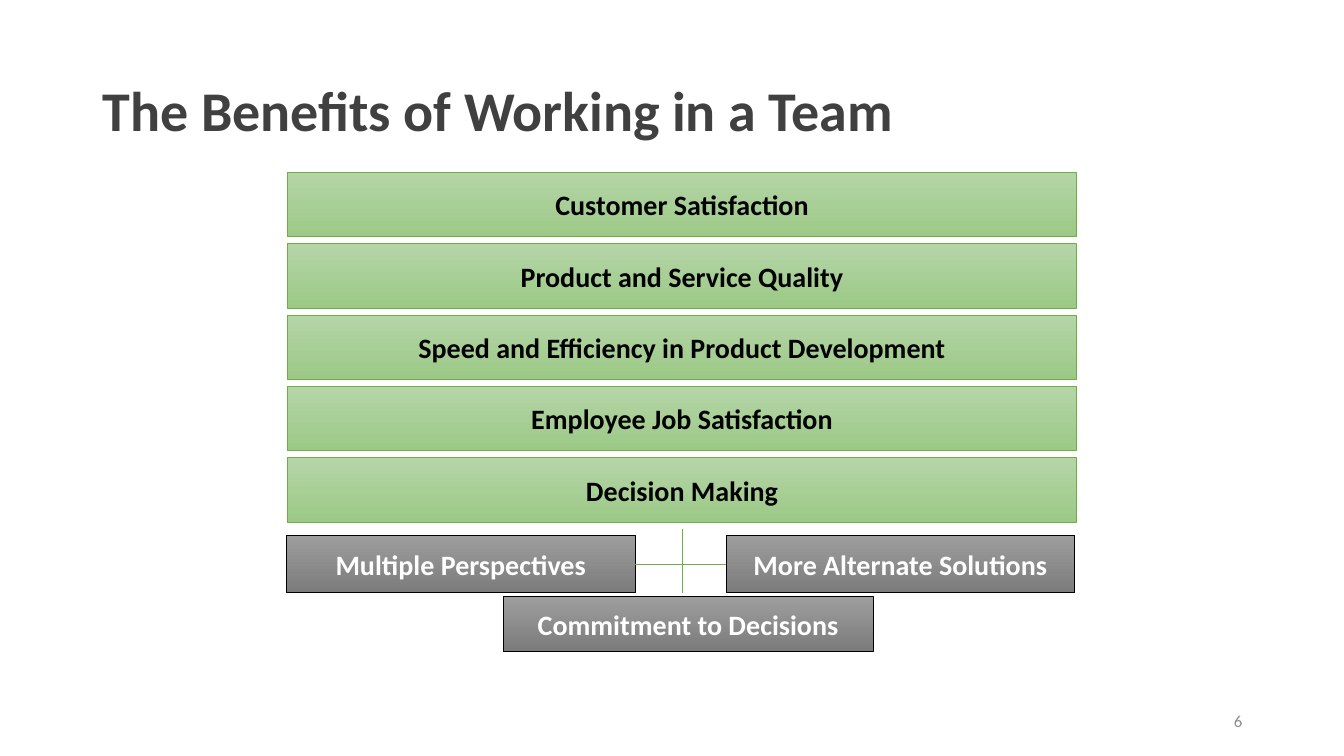
from lxml.etree import SubElement
from pptx import Presentation
from pptx.dml.color import RGBColor
from pptx.enum.shapes import MSO_CONNECTOR, MSO_SHAPE
from pptx.enum.text import MSO_ANCHOR, PP_ALIGN
from pptx.oxml.ns import qn
from pptx.util import Inches, Pt

COLORS = {
    "title": "404041", "number": "8C8C8C", "black": "000000", "white": "FFFFFF",
    "green": "70AD47", "green_top": "B5D5A7", "green_end": "9CC987",
    "grey_top": "9D9D9D", "grey_end": "7C7C7C",
}
BENEFITS = [
    "Customer Satisfaction",
    "Product and Service Quality",
    "Speed and Efficiency in Product Development",
    "Employee Job Satisfaction",
    "Decision Making",
]


def color(name):
    """Return the named colour."""
    return RGBColor.from_string(COLORS[name])


def write(s, text, size=20, ink="black", bold=True, align=PP_ALIGN.CENTER, wrap=False, spacing=None):
    """Write one formatted paragraph, centred vertically, in a shape."""
    tf = s.text_frame
    tf.word_wrap = wrap
    tf.vertical_anchor = MSO_ANCHOR.MIDDLE
    p = tf.paragraphs[0]
    p.alignment = align
    p.line_spacing = spacing
    r = p.add_run()
    r.text = text
    r.font.name = "Calibri"
    r.font.size = Pt(size)
    r.font.bold = bold
    r.font.color.rgb = color(ink)


def add_label(slide, x, y, w, h, text, **fmt):
    """Add a text box with one paragraph."""
    s = slide.shapes.add_textbox(Inches(x), Inches(y), Inches(w), Inches(h))
    write(s, text, wrap=True, **fmt)


def add_bar(slide, x, y, w, h, text, top, end, edge, ink):
    """Add a captioned rectangle with a vertical gradient."""
    s = slide.shapes.add_shape(MSO_SHAPE.RECTANGLE, Inches(x), Inches(y), Inches(w), Inches(h))
    s.shadow.inherit = False
    s.fill.gradient()
    s.fill.gradient_angle = 270
    for stop, name in zip(s.fill.gradient_stops, (top, end)):
        stop.color.rgb = color(name)
    s.line.color.rgb = color(edge)
    s.line.width = Pt(0.5)
    write(s, text, ink=ink)
    return s


def add_line(slide, x1, y1, x2, y2):
    """Add a thin green line."""
    c = slide.shapes.add_connector(MSO_CONNECTOR.STRAIGHT, Inches(x1), Inches(y1), Inches(x2), Inches(y2))
    c.line.color.rgb = color("green")
    c.line.width = Pt(0.5)
    SubElement(c._element.spPr, qn("a:effectLst"))
    return c


def add_benefits(slide, x, y, w, h, gap=0.07):
    """Stack the benefit bars evenly in the box."""
    bar_h = (h + gap) / len(BENEFITS) - gap
    for i, text in enumerate(BENEFITS):
        add_bar(slide, x, y + i * (bar_h + gap), w, bar_h, text, "green_top", "green_end", "green", "black")


def add_decision_factors(slide, x, y, w, h):
    """Place two linked factors side by side above a third one."""
    grey = ("grey_top", "grey_end", "black", "white")
    box_w, box_h, base_h = 3.46, 0.57, 0.54
    mid = x + w / 2 + 0.02
    add_bar(slide, x + 2.15, y + h - base_h, 3.67, base_h, "Commitment to Decisions", *grey)
    right = add_bar(slide, x + w - box_w, y, box_w, box_h, "More Alternate Solutions", *grey)
    left = add_bar(slide, x, y, box_w, box_h, "Multiple Perspectives", *grey)
    link = add_line(slide, x + box_w, y + box_h / 2, x + w - box_w, y + box_h / 2)
    link.begin_connect(left, 3)
    link.end_connect(right, 1)
    add_line(slide, mid, y - 0.06, mid, y + box_h)


def main():
    """Build and save the slide."""
    prs = Presentation()
    prs.slide_width, prs.slide_height = Inches(13.33), Inches(7.5)
    slide = prs.slides.add_slide(prs.slide_layouts[6])
    add_label(slide, 0.92, 0.4, 11.5, 1.45, "The Benefits of Working in a Team",
              size=40, ink="title", align=PP_ALIGN.LEFT, spacing=0.9)
    add_benefits(slide, 2.85, 1.71, 7.83, 3.47)
    add_decision_factors(slide, 2.84, 5.31, 7.82, 1.15)
    add_label(slide, 9.42, 6.95, 3, 0.4, "6", size=12, ink="number", bold=False, align=PP_ALIGN.RIGHT)
    prs.save("out.pptx")


if __name__ == "__main__":
    main()
